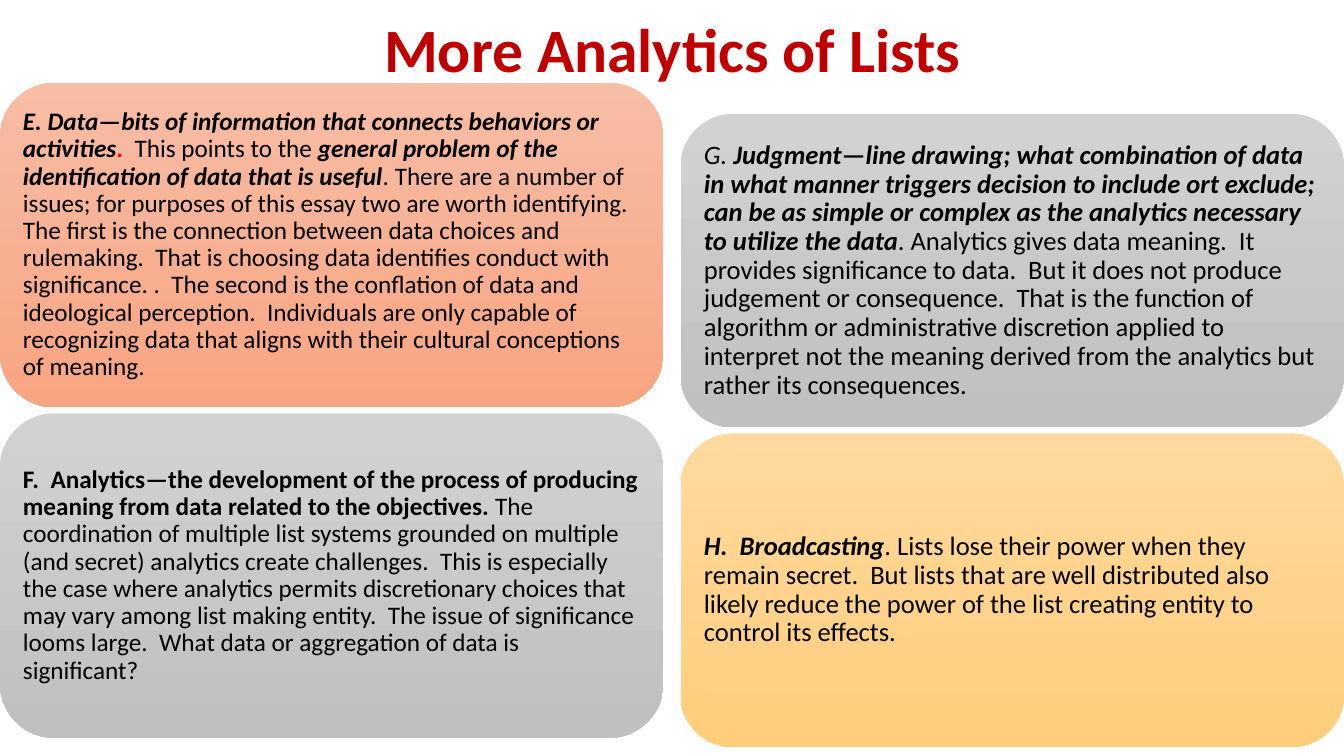
"""Build the slide "More Analytics of Lists" with four text panels."""
from pptx import Presentation
from pptx.dml.color import RGBColor
from pptx.enum.shapes import MSO_SHAPE
from pptx.enum.text import MSO_ANCHOR, PP_ALIGN
from pptx.util import Inches, Pt

COLOURS = {
    "title": "C00000", "text": "000000", "accent": "FF0000",
    "salmon_top": "F7BDA5", "salmon_bottom": "F8A582",
    "grey_top": "D2D2D2", "grey_bottom": "C0C0C0",
    "gold_top": "FFD99E", "gold_bottom": "FFCE7C",
}

DATA = [
    ("E. Data—bits of information that connects behaviors or activities", {"bold": True, "italic": True}),
    (".  ", {"bold": True, "colour": "accent"}),
    ("This points to the ", {}),
    ("general problem of the identification of data that is useful", {"bold": True, "italic": True}),
    (". There are a number of issues; for purposes of this essay two are worth identifying.  "
     "The first is the connection between data choices and rulemaking.  That is choosing data "
     "identifies conduct with significance. .  The second is the conflation of data and "
     "ideological perception.  Individuals are only capable of recognizing data that aligns "
     "with their cultural conceptions of meaning.", {}),
]
ANALYTICS = [
    ("F.  Analytics—the development of the process of producing meaning from data related "
     "to the objectives. ", {"bold": True}),
    ("The coordination of multiple list systems grounded on multiple (and secret) analytics "
     "create challenges.  This is especially the case where analytics permits discretionary "
     "choices that may vary among list making entity.  The issue of significance looms large.  "
     "What data or aggregation of data is significant?", {}),
]
JUDGMENT = [
    ("G. ", {"italic": True}),
    ("Judgment—line drawing; what combination of data in what manner triggers decision to "
     "include ort exclude; can be as simple or complex as the analytics necessary to utilize "
     "the data", {"bold": True, "italic": True}),
    (". Analytics gives data meaning.  It provides significance to data.  But it does not "
     "produce judgement or consequence.  That is the function of algorithm or administrative "
     "discretion applied to interpret not the meaning derived from the analytics but rather "
     "its consequences.", {}),
]
BROADCASTING = [
    ("H.  Broadcasting", {"bold": True, "italic": True}),
    (". Lists lose their power when they remain secret.  But lists that are well distributed "
     "also likely reduce the power of the list creating entity to control its effects.", {}),
]

PANEL_WIDTH = 6.58
PANEL_GAP = 0.06
COLUMNS = [
    {"left": 0, "top": 0.82, "height": 3.22, "size": 18, "inset": 0.07,
     "panels": [("salmon", DATA), ("grey", ANALYTICS)]},
    {"left": 6.75, "top": 1.13, "height": 3.11, "size": 19, "inset": 0.08,
     "panels": [("grey", JUDGMENT), ("gold", BROADCASTING)]},
]


def add_span(para, text, size, colour="text", bold=False, italic=False):
    """Append formatted text to a paragraph."""
    span = para.add_run()
    span.text = text
    font = span.font
    font.name, font.size, font.bold, font.italic = "Calibri", Pt(size), bold, italic
    font.color.rgb = RGBColor.from_string(COLOURS[colour])


class ListSlide:
    """Hold the style and the current page."""

    def __init__(self, deck):
        """Add a title-only page to the deck."""
        self.page = deck.slides.add_slide(deck.slide_layouts[5])

    def style_frame(self, frame, align):
        """Centre a text frame vertically and return its first paragraph."""
        frame.word_wrap = True
        frame.vertical_anchor = MSO_ANCHOR.MIDDLE
        para = frame.paragraphs[0]
        para.alignment = align
        para.line_spacing = 0.9
        return para

    def title(self, text):
        """Place and fill the title placeholder."""
        box = self.page.shapes.title
        box.left, box.top = Inches(0.92), Inches(0)
        box.width, box.height = Inches(11.5), Inches(1.04)
        para = self.style_frame(box.text_frame, PP_ALIGN.CENTER)
        add_span(para, text, size=44, colour="title", bold=True)

    def panel(self, left, top, height, tone, spans, size, inset):
        """Draw a rounded gradient panel with mixed-format text."""
        box = self.page.shapes.add_shape(
            MSO_SHAPE.ROUNDED_RECTANGLE,
            Inches(left), Inches(top), Inches(PANEL_WIDTH), Inches(height))
        box.shadow.inherit = False
        box.line.fill.background()
        box.fill.gradient()
        box.fill.gradient_angle = 270
        for stop, end in zip(box.fill.gradient_stops, ("top", "bottom")):
            stop.color.rgb = RGBColor.from_string(COLOURS[f"{tone}_{end}"])
        frame = box.text_frame
        frame.margin_left = frame.margin_right = Inches(inset)
        frame.margin_top = frame.margin_bottom = Inches(inset)
        para = self.style_frame(frame, PP_ALIGN.LEFT)
        for text, style in spans:
            add_span(para, text, size=size, **style)


def main():
    """Build and save the deck."""
    deck = Presentation()
    deck.slide_width, deck.slide_height = Inches(13.33), Inches(7.5)
    slide = ListSlide(deck)
    slide.title("More Analytics of Lists")
    for column in COLUMNS:
        for row, (tone, spans) in enumerate(column["panels"]):
            top = column["top"] + row * (column["height"] + PANEL_GAP)
            slide.panel(column["left"], top, column["height"], tone, spans,
                        column["size"], column["inset"])
    deck.save("out.pptx")


if __name__ == "__main__":
    main()
